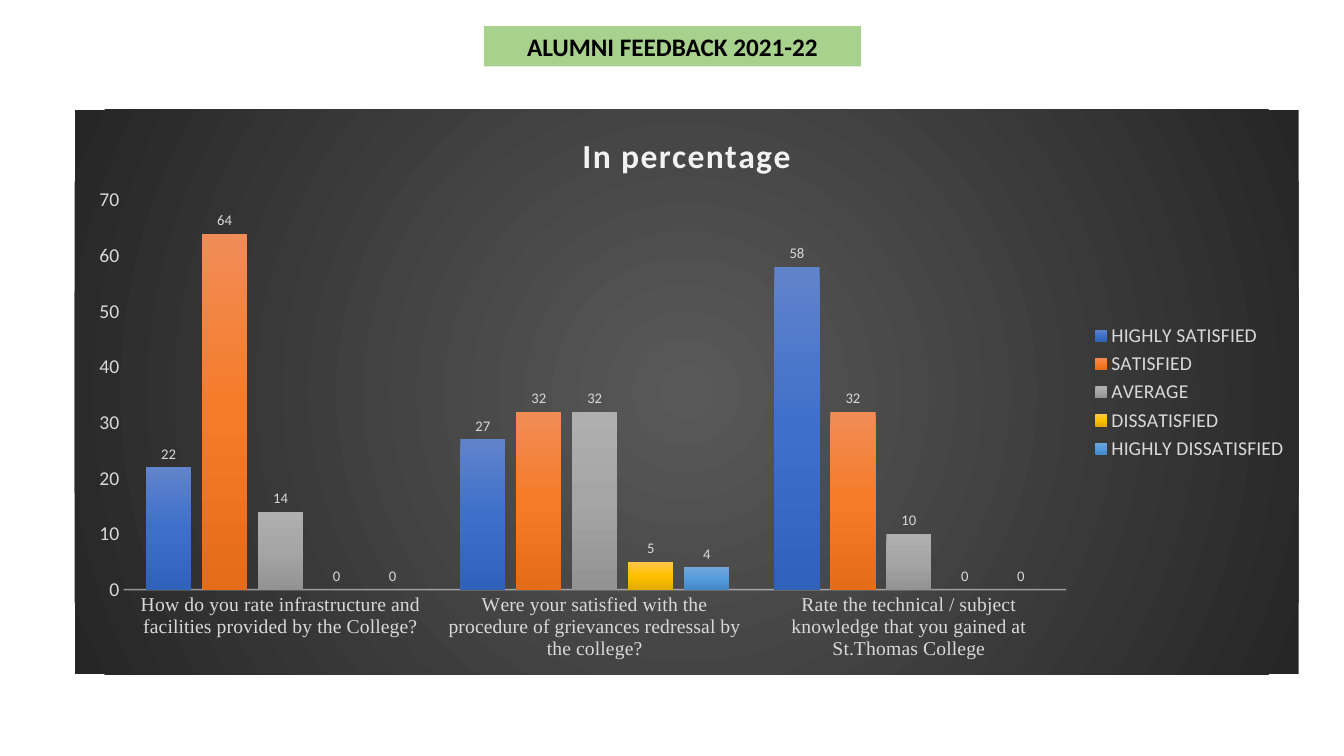
"""Build the alumni feedback slide with a satisfaction column chart."""
from lxml import etree
from pptx import Presentation
from pptx.chart.data import CategoryChartData
from pptx.dml.color import RGBColor
from pptx.enum.chart import XL_CHART_TYPE, XL_LABEL_POSITION, XL_LEGEND_POSITION, XL_TICK_MARK
from pptx.enum.shapes import MSO_SHAPE
from pptx.enum.text import MSO_ANCHOR, PP_ALIGN
from pptx.oxml import parse_xml
from pptx.oxml.ns import nsdecls, qn
from pptx.util import Inches, Pt

RECT = MSO_SHAPE.RECTANGLE
CENTER, MIDDLE = PP_ALIGN.CENTER, MSO_ANCHOR.MIDDLE
COLUMN = XL_CHART_TYPE.COLUMN_CLUSTERED
OUTSIDE, RIGHT = XL_LABEL_POSITION.OUTSIDE_END, XL_LEGEND_POSITION.RIGHT
NO_TICK = XL_TICK_MARK.NONE

BLACK = RGBColor(0x00, 0x00, 0x00)
GREEN = RGBColor(0xA9, 0xD1, 0x8E)
PALE = RGBColor(0xD9, 0xD9, 0xD9)
WHITE = RGBColor(0xF2, 0xF2, 0xF2)
CHARCOAL = [RGBColor(0x59, 0x59, 0x59), RGBColor(0x26, 0x26, 0x26)]
BLUES = [RGBColor(0x61, 0x83, 0xCB), RGBColor(0x3E, 0x70, 0xCA), RGBColor(0x30, 0x62, 0xBB)]
ORANGES = [RGBColor(0xF1, 0x8C, 0x57), RGBColor(0xF6, 0x7B, 0x28), RGBColor(0xE5, 0x6C, 0x19)]
GREYS = [RGBColor(0xAF, 0xAF, 0xAF), RGBColor(0xA5, 0xA5, 0xA5), RGBColor(0x93, 0x93, 0x93)]
GOLDS = [RGBColor(0xFF, 0xC6, 0x4B), RGBColor(0xFF, 0xC0, 0x00), RGBColor(0xE3, 0xAB, 0x00)]
SKIES = [RGBColor(0x71, 0xA6, 0xDB), RGBColor(0x55, 0x9B, 0xDB), RGBColor(0x44, 0x8A, 0xCA)]

QUESTIONS = [
    "How do you rate infrastructure and facilities provided by the College?",
    "Were your satisfied with the procedure of grievances redressal by the college?",
    "Rate the technical / subject knowledge that you gained at St.Thomas College",
]
RATINGS = [
    ("HIGHLY SATISFIED", (22, 27, 58), BLUES),
    ("SATISFIED", (64, 32, 32), ORANGES),
    ("AVERAGE", (14, 32, 10), GREYS),
    ("DISSATISFIED", (0, 5, 0), GOLDS),
    ("HIGHLY DISSATISFIED", (0, 4, 0), SKIES),
]
LINEAR = '<a:lin ang="5400000" scaled="0"/>'
RADIAL = '<a:path path="circle"><a:fillToRect l="50000" t="50000" r="50000" b="50000"/></a:path>'


def gradient(colors, direction):
    """Return a gradient fill with evenly spaced stops."""
    step = 100000 // (len(colors) - 1)
    stops = "".join(
        f'<a:gs pos="{i * step}"><a:srgbClr val="{c}"/></a:gs>' for i, c in enumerate(colors)
    )
    return parse_xml(
        f'<a:gradFill {nsdecls("a")} rotWithShape="1"><a:gsLst>{stops}</a:gsLst>{direction}</a:gradFill>'
    )


class Deck:
    """Hold the style and the current slide."""

    body, serif = "Calibri", "Times New Roman"

    def __init__(self, prs):
        self.slide = prs.slides.add_slide(prs.slide_layouts[6])

    def style(self, font, size, color, name=body, bold=False):
        """Apply size, colour, face and weight to a font."""
        font.size, font.name, font.bold = Pt(size), name, bold
        font.color.rgb = color

    def banner(self, text, x, y, w, h):
        """Add a filled heading bar."""
        sp = self.slide.shapes.add_shape(RECT, Inches(x), Inches(y), Inches(w), Inches(h))
        sp.shadow.inherit = False
        sp.fill.solid()
        sp.fill.fore_color.rgb = GREEN
        sp.line.fill.background()
        tf = sp.text_frame
        tf.vertical_anchor = MIDDLE
        p = tf.paragraphs[0]
        p.text, p.alignment = text, CENTER
        self.style(p.font, 18, BLACK, bold=True)

    def columns(self, title, x, y, w, h):
        """Add the clustered column chart of ratings by question."""
        data = CategoryChartData()
        data.categories = QUESTIONS
        for name, values, _ in RATINGS:
            data.add_series(name, values)
        chart = self.slide.shapes.add_chart(
            COLUMN, Inches(x), Inches(y), Inches(w), Inches(h), data
        ).chart
        self.style(chart.font, 10, BLACK)
        self.title(chart, title)
        self.axes(chart)
        chart.has_legend = True
        chart.legend.position, chart.legend.include_in_layout = RIGHT, False
        self.style(chart.legend.font, 14, PALE)
        plot = chart.plots[0]
        plot.gap_width, plot.overlap, plot.vary_by_categories = 100, -24, False
        for s, (_, _, colors) in zip(plot.series, RATINGS):
            s.format.fill.background()
            pr = s._element.spPr
            pr.replace(pr.find(qn("a:noFill")), gradient(colors, LINEAR))
            labels = s.data_labels
            labels.show_value, labels.position = True, OUTSIDE
            self.style(labels.font, 10.5, PALE)
        self.backdrop(chart)
        self.plot_area(chart, x=0.04, y=0.16, w=0.77, h=0.69)

    def title(self, chart, text):
        """Set the letter-spaced chart title."""
        chart.has_title = True
        chart.chart_title.include_in_layout = False
        r = chart.chart_title.text_frame.paragraphs[0].add_run()
        r.text = text
        self.style(r.font, 24, WHITE, bold=True)
        r._r.get_or_add_rPr().set("spc", "100")

    def axes(self, chart):
        """Style both axes and fix the value scale."""
        cat, val = chart.category_axis, chart.value_axis
        for axis, name in ((cat, self.serif), (val, self.body)):
            axis.major_tick_mark = axis.minor_tick_mark = NO_TICK
            axis.has_major_gridlines = False
            self.style(axis.tick_labels.font, 14, PALE, name)
        val.minimum_scale, val.maximum_scale, val.major_unit = 0, 70, 10
        val.format.line.fill.background()
        line = cat.format.line
        line.width, line.color.rgb = Pt(1), WHITE
        color = cat._element.find(".//" + qn("c:spPr")).find(".//" + qn("a:srgbClr"))
        etree.SubElement(color, qn("a:alpha")).set("val", "54000")

    def backdrop(self, chart):
        """Fill the chart area with a dark radial gradient."""
        pr = parse_xml(f'<c:spPr {nsdecls("c", "a")}><a:ln><a:noFill/></a:ln></c:spPr>')
        pr.insert(0, gradient(CHARCOAL, RADIAL))
        chart._chartSpace.find(qn("c:chart")).addnext(pr)

    def plot_area(self, chart, **box):
        """Place the inner plot area by fractions of the chart."""
        area = chart._chartSpace.find(".//" + qn("c:plotArea"))
        for old in area.findall(qn("c:layout")):
            area.remove(old)
        modes = "".join(f'<c:{k}Mode val="edge"/>' for k in "xy")
        sizes = "".join(f'<c:{k} val="{v}"/>' for k, v in box.items())
        area.insert(0, parse_xml(
            f'<c:layout {nsdecls("c")}><c:manualLayout><c:layoutTarget val="inner"/>'
            f'{modes}{sizes}</c:manualLayout></c:layout>'
        ))


def main():
    """Build and save the slide."""
    prs = Presentation()
    prs.slide_width, prs.slide_height = Inches(13.33), Inches(7.5)
    deck = Deck(prs)
    deck.banner("ALUMNI FEEDBACK 2021-22", 4.8, 0.26, 3.74, 0.4)
    deck.columns("In percentage", 0.74, 1.09, 12.14, 5.6)
    prs.save("out.pptx")


if __name__ == "__main__":
    main()
